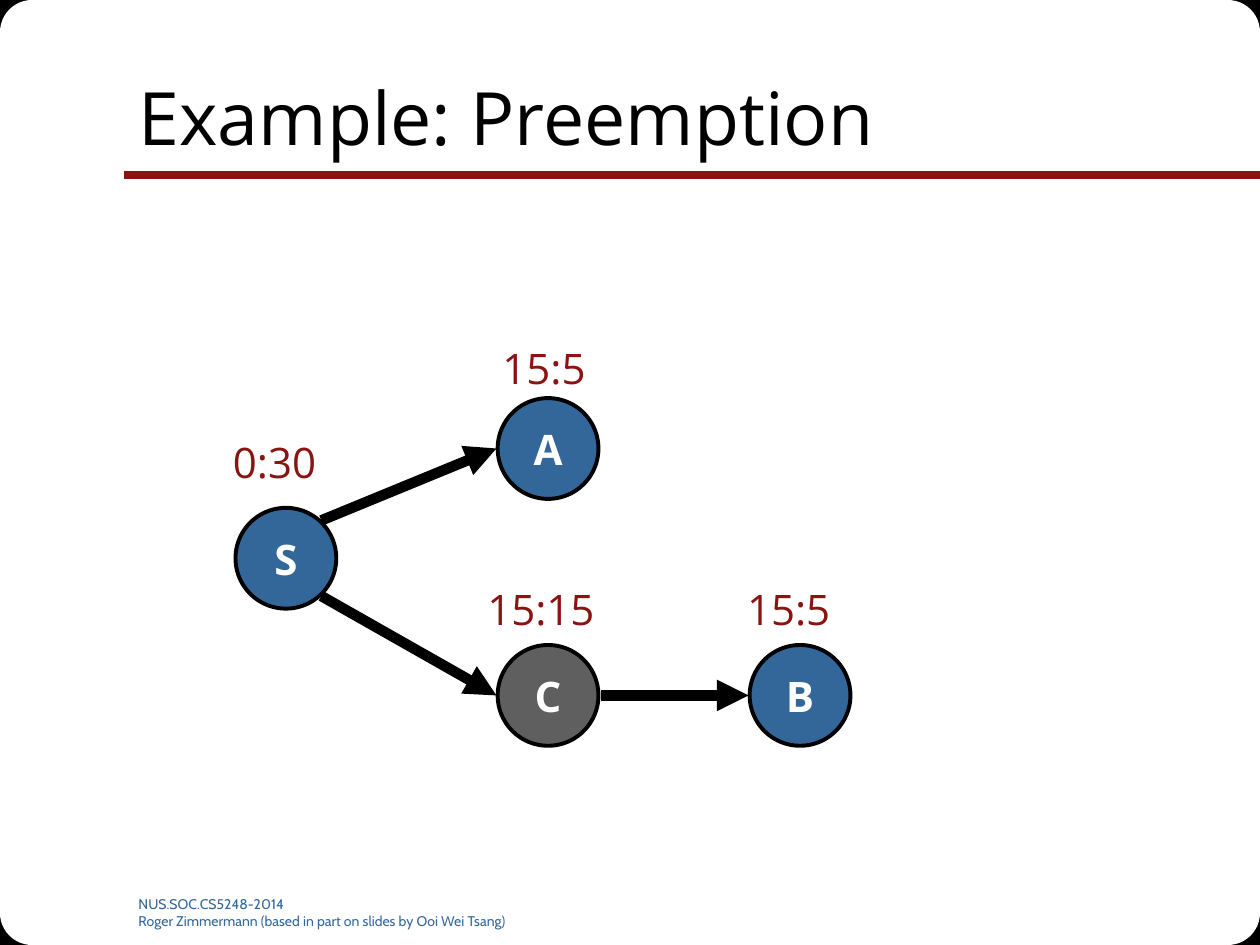
from lxml import etree
from pptx import Presentation
from pptx.dml.color import RGBColor
from pptx.enum.shapes import MSO_CONNECTOR, MSO_SHAPE
from pptx.enum.text import MSO_ANCHOR, MSO_AUTO_SIZE, PP_ALIGN
from pptx.oxml.ns import qn
from pptx.util import Pt

BLACK = RGBColor(0x00, 0x00, 0x00)
WHITE = RGBColor(0xFF, 0xFF, 0xFF)
BLUE = RGBColor(0x33, 0x66, 0x99)
GRAY = RGBColor(0x5F, 0x5F, 0x5F)
RED = RGBColor(0x89, 0x14, 0x11)
STRAIGHT = MSO_CONNECTOR.STRAIGHT
TOP, MIDDLE = MSO_ANCHOR.TOP, MSO_ANCHOR.MIDDLE
LEFT, CENTER = PP_ALIGN.LEFT, PP_ALIGN.CENTER

WIDTH, HEIGHT = 720, 540
FONT = "Open Sans"
TITLE = "Example: Preemption"
FOOTER = [
    "NUS.SOC.CS5248-2014",
    "Roger Zimmermann (based in part on slides by Ooi Wei Tsang)",
]
DIAMETER = 57.6
# name, left, top, fill
NODES = [
    ("S", 134.6, 290.2, BLUE),
    ("A", 284.4, 227.5, BLUE),
    ("C", 284.4, 368.6, GRAY),
    ("B", 428.4, 368.6, BLUE),
]
# text, left, top, width
TIMES = [
    ("0:30", 126, 246.2, 67.7),
    ("15:5", 280, 192.2, 67.7),
    ("15:15", 271.4, 329.8, 82.8),
    ("15:5", 419.8, 329.8, 67.7),
]
# start x, start y, end x, end y
ARROWS = [
    (183.6, 297.4, 283.7, 256.3),
    (183.6, 340.6, 283.7, 397.4),
    (343.4, 397.4, 427.7, 397.4),
]


def write(frame, lines, size, color, font=FONT, bold=False, align=LEFT,
          anchor=TOP, wrap=False):
    frame.word_wrap = wrap
    frame.auto_size = MSO_AUTO_SIZE.NONE
    frame.vertical_anchor = anchor
    for index, line in enumerate(lines):
        paragraph = frame.paragraphs[0] if index == 0 else frame.add_paragraph()
        paragraph.alignment = align
        run = paragraph.add_run()
        run.text = line
        run.font.name = font
        run.font.size = Pt(size)
        run.font.bold = bold
        run.font.color.rgb = color


def add_filled(slide, kind, left, top, size, fill, line_width=0):
    shape = slide.shapes.add_shape(kind, Pt(left), Pt(top), Pt(size), Pt(size))
    shape.shadow.inherit = False
    shape.fill.solid()
    shape.fill.fore_color.rgb = fill
    if line_width:
        shape.line.color.rgb = BLACK
        shape.line.width = Pt(line_width)
    else:
        shape.line.fill.background()
    return shape


def add_line(slide, points, color, width, arrow=False):
    line = slide.shapes.add_connector(STRAIGHT, *[Pt(value) for value in points])
    line.line.color.rgb = color
    line.line.width = Pt(width)
    properties = line.element.spPr
    if arrow:
        outline = properties.find(qn("a:ln"))
        etree.SubElement(outline, qn("a:tailEnd"), type="triangle")
    etree.SubElement(properties, qn("a:effectLst"))


def add_corners(slide, kind, size, fill, line_width=0):
    for left in (0, WIDTH - size):
        for top in (0, HEIGHT - size):
            add_filled(slide, kind, left, top, size, fill, line_width)


def add_text(slide, left, top, width, height, lines, size, color, **style):
    box = slide.shapes.add_textbox(Pt(left), Pt(top), Pt(width), Pt(height))
    write(box.text_frame, lines, size, color, **style)
    return box


def add_title(slide):
    title = slide.shapes.title
    title.left, title.top = Pt(72), Pt(21.6)
    title.width, title.height = Pt(612), Pt(90)
    write(title.text_frame, [TITLE], 42, BLACK, anchor=MIDDLE, wrap=True)
    # Bring the title in front of the white corners.
    title.element.getparent().append(title.element)


def main():
    presentation = Presentation()
    presentation.slide_width, presentation.slide_height = Pt(WIDTH), Pt(HEIGHT)
    slide = presentation.slides.add_slide(presentation.slide_layouts[5])

    add_corners(slide, MSO_SHAPE.RECTANGLE, 31, BLACK, 0.75)
    add_corners(slide, MSO_SHAPE.ROUNDED_RECTANGLE, 110, WHITE)
    add_line(slide, (WIDTH, 100, 70.6, 100), RED, 4.5)
    add_title(slide)

    footer = add_text(slide, 72, 508.3, 246.2, 20.2, FOOTER, 8, BLUE,
                      font="Cabin", wrap=True)
    footer.text_frame.margin_top = footer.text_frame.margin_bottom = Pt(3.6)

    for name, left, top, fill in NODES:
        node = add_filled(slide, MSO_SHAPE.OVAL, left, top, DIAMETER, fill, 2.25)
        write(node.text_frame, [name], 24, WHITE, bold=True, align=CENTER,
              anchor=MIDDLE)
    for text, left, top, width in TIMES:
        add_text(slide, left, top, width, 36, [text], 24, RED)
    for points in ARROWS:
        add_line(slide, points, BLACK, 6, arrow=True)

    presentation.save("out.pptx")


if __name__ == "__main__":
    main()
